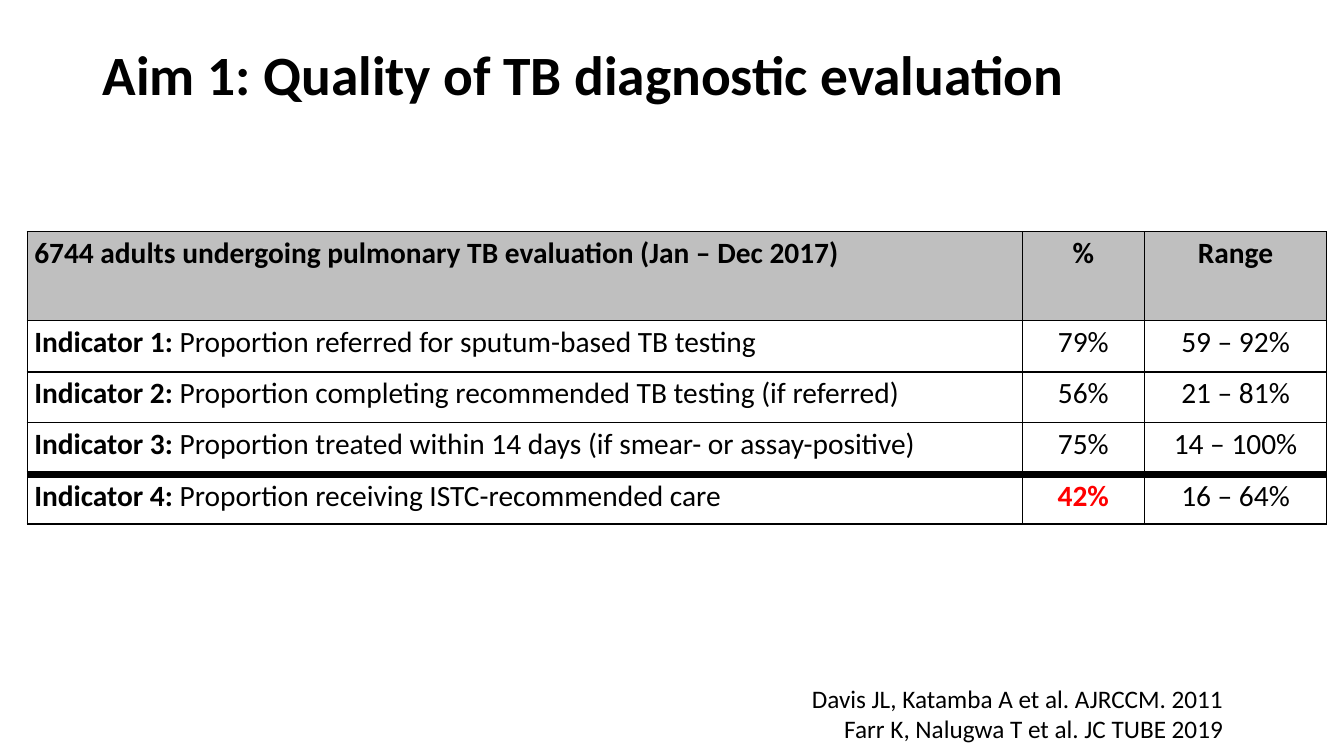
from lxml import etree
from pptx import Presentation
from pptx.dml.color import RGBColor
from pptx.enum.text import MSO_ANCHOR, PP_ALIGN
from pptx.oxml.ns import qn
from pptx.util import Inches, Pt

LEFT, CENTER, RIGHT = PP_ALIGN.LEFT, PP_ALIGN.CENTER, PP_ALIGN.RIGHT
MIDDLE = MSO_ANCHOR.MIDDLE

COLORS = {"text": "000000", "header": "BFBFBF", "alert": "FF0000", "border": "000000"}
CELL_MARGINS = {"margin_left": Inches(0.07), "margin_right": Inches(0.07),
                "margin_top": Inches(0.04), "margin_bottom": Inches(0.04)}
COLUMN_WIDTHS = [9.87, 1.21, 1.81]
ROW_HEIGHTS = [0.88, 0.51, 0.5, 0.52, 0.49]
THIN, THICK = 1, 6
SUMMARY_ROW = 4

HEADINGS = ["6744 adults undergoing pulmonary TB evaluation (Jan – Dec 2017)", "%", "Range"]
INDICATORS = [
    ("Proportion referred for sputum-based TB testing", "79%", "59 – 92%"),
    ("Proportion completing recommended TB testing (if referred)", "56%", "21 – 81%"),
    ("Proportion treated within 14 days (if smear- or assay-positive)", "75%", "14 – 100%"),
    ("Proportion receiving ISTC-recommended care", "42%", "16 – 64%"),
]
CITATIONS = ["Davis JL, Katamba A et al. AJRCCM. 2011",
             "Farr K, Nalugwa T et al. JC TUBE 2019"]


def add_run(paragraph, text, size, bold=False, color="text"):
    """Append a formatted run to a paragraph."""
    run = paragraph.add_run()
    run.text = text
    for name, value in {"name": "Calibri", "size": Pt(size), "bold": bold}.items():
        setattr(run.font, name, value)
    run.font.color.rgb = RGBColor.from_string(COLORS[color])


def set_borders(cell, top, bottom):
    """Draw the four solid borders of a cell, widths in points."""
    properties = cell._tc.get_or_add_tcPr()
    for side, width in {"lnL": THIN, "lnR": THIN, "lnT": top, "lnB": bottom}.items():
        line = etree.SubElement(properties, qn(f"a:{side}"), w=str(Pt(width)))
        fill = etree.SubElement(line, qn("a:solidFill"))
        etree.SubElement(fill, qn("a:srgbClr"), val=COLORS["border"])


def add_title(slide, left, top, width, height):
    """Place the slide title in its placeholder."""
    title = slide.shapes.title
    box = {"left": left, "top": top, "width": width, "height": height}
    for name, value in box.items():
        setattr(title, name, Inches(value))
    title.text_frame.vertical_anchor = MIDDLE
    heading = title.text_frame.paragraphs[0]
    heading.alignment = LEFT
    heading.line_spacing = 0.9
    add_run(heading, "Aim 1: Quality of TB diagnostic evaluation", 39.6, True)


def add_indicator_table(slide, left, top):
    """Build the table of quality indicators."""
    rows = [HEADINGS, *INDICATORS]
    table = slide.shapes.add_table(
        len(rows), len(HEADINGS), Inches(left), Inches(top),
        Inches(sum(COLUMN_WIDTHS)), Inches(sum(ROW_HEIGHTS))).table
    table.first_row = table.horz_banding = False
    for column, width in zip(table.columns, COLUMN_WIDTHS):
        column.width = Inches(width)
    for row, height in zip(table.rows, ROW_HEIGHTS):
        row.height = Inches(height)

    for r, entries in enumerate(rows):
        for c, entry in enumerate(entries):
            cell = table.cell(r, c)
            for name, value in CELL_MARGINS.items():
                setattr(cell, name, value)
            set_borders(cell, THICK if r == SUMMARY_ROW else THIN,
                        THICK if r == SUMMARY_ROW - 1 else THIN)
            if r == 0:
                cell.fill.solid()
                cell.fill.fore_color.rgb = RGBColor.from_string(COLORS["header"])
            else:
                cell.fill.background()
            paragraph = cell.text_frame.paragraphs[0]
            paragraph.alignment = CENTER if c else LEFT
            if r and c == 0:
                add_run(paragraph, f"Indicator {r}: ", 21, True)
            alert = r == SUMMARY_ROW and c == 1
            add_run(paragraph, entry, 21, r == 0 or alert, "alert" if alert else "text")


def add_citations(slide, left, top, width, height):
    """Place the right-aligned citations."""
    frame = slide.shapes.add_textbox(
        Inches(left), Inches(top), Inches(width), Inches(height)).text_frame
    frame.word_wrap = True
    for i, citation in enumerate(CITATIONS):
        paragraph = frame.add_paragraph() if i else frame.paragraphs[0]
        paragraph.alignment = RIGHT
        add_run(paragraph, citation, 18)


def main():
    """Build and save the slide."""
    deck = Presentation()
    deck.slide_width, deck.slide_height = Inches(13.33), Inches(7.5)
    slide = deck.slides.add_slide(deck.slide_layouts.get_by_name("Title Only"))
    add_title(slide, 0.92, 0.4, 11.5, 0.74)
    add_indicator_table(slide, 0.27, 2.3)
    add_citations(slide, 6.01, 6.73, 6.22, 0.71)
    deck.save("out.pptx")


if __name__ == "__main__":
    main()
